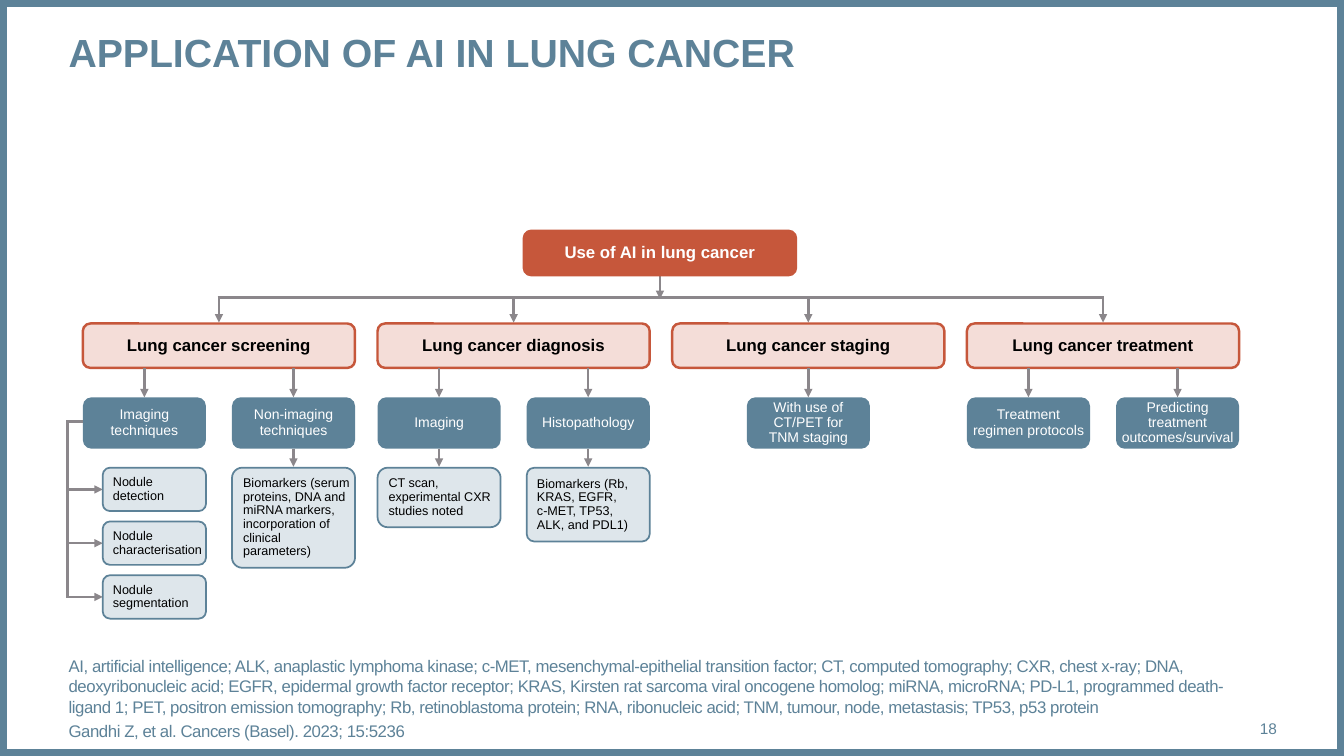
from dataclasses import dataclass

from lxml import etree
from pptx import Presentation
from pptx.dml.color import RGBColor
from pptx.enum.shapes import MSO_CONNECTOR, MSO_SHAPE
from pptx.enum.text import MSO_ANCHOR, MSO_AUTO_SIZE, PP_ALIGN
from pptx.oxml.ns import qn
from pptx.slide import Slide
from pptx.text.text import TextFrame
from pptx.util import Pt

RECT, ROUNDED = MSO_SHAPE.RECTANGLE, MSO_SHAPE.ROUNDED_RECTANGLE
STRAIGHT = MSO_CONNECTOR.STRAIGHT
TOP, MIDDLE, BOTTOM = MSO_ANCHOR.TOP, MSO_ANCHOR.MIDDLE, MSO_ANCHOR.BOTTOM
LEFT, CENTER, RIGHT = PP_ALIGN.LEFT, PP_ALIGN.CENTER, PP_ALIGN.RIGHT
NO_FIT = MSO_AUTO_SIZE.NONE

BLUE = RGBColor(0x5D, 0x82, 0x98)
PALE_BLUE = RGBColor(0xDE, 0xE6, 0xEB)
RUST = RGBColor(0xC6, 0x57, 0x3B)
PALE_RUST = RGBColor(0xF4, 0xDD, 0xD8)
GREY = RGBColor(0x8B, 0x87, 0x8B)
BLACK = RGBColor(0, 0, 0)
WHITE = RGBColor(0xFF, 0xFF, 0xFF)

SLIDE_W, SLIDE_H = 960, 540
MARGIN = 49
ROOT_X, ROOT_Y = 374.2, 164.9
BUS_Y = 212.6
BRANCH_X, BRANCH_Y, BRANCH_W, BRANCH_H, BRANCH_PITCH = 59.2, 231.1, 194.4, 31.7, 210.5
TOPIC_Y, TOPIC_W, TOPIC_H = 283.8, 87.9, 36.7
DETAIL_Y = 334.1
NODULE_X, NODULE_W, NODULE_H, NODULE_PITCH = 73.4, 73.8, 31, 38.4
RAIL_X, RAIL_Y = 48.2, 301


@dataclass(frozen=True)
class BoxStyle:
    fill: RGBColor
    line: RGBColor | None
    line_w: float
    color: RGBColor
    size: float
    bold: bool = False
    align: PP_ALIGN = CENTER
    inset: float = 0


@dataclass(frozen=True)
class Topic:
    text: str
    detail: str = ""
    detail_h: float = 0
    corner: float = 0.169


@dataclass(frozen=True)
class Branch:
    text: str
    topics: tuple[Topic, ...]


ROOT_STYLE = BoxStyle(RUST, RUST, 1.75, WHITE, 12, True)
BRANCH_STYLE = BoxStyle(PALE_RUST, RUST, 1.75, BLACK, 12, True)
TOPIC_STYLE = BoxStyle(BLUE, None, 0, WHITE, 10)
DETAIL_STYLE = BoxStyle(PALE_BLUE, BLUE, 1.25, BLACK, 9, False, LEFT, 5.76)

BRANCHES = (
    Branch("Lung cancer screening", (
        Topic("Imaging\ntechniques"),
        Topic("Non-imaging\ntechniques",
              "Biomarkers (serum proteins, DNA and miRNA markers, "
              "incorporation of clinical parameters)", 71.5, 0.103))),
    Branch("Lung cancer diagnosis", (
        Topic("Imaging", "CT scan, experimental CXR studies noted", 42.5),
        Topic("Histopathology",
              "Biomarkers (Rb,\nKRAS, EGFR,\nc-MET, TP53,\nALK, and PDL1)", 52.7, 0.103))),
    Branch("Lung cancer staging", (Topic("With use of CT/PET for\nTNM staging"),)),
    Branch("Lung cancer treatment", (
        Topic("Treatment\nregimen protocols"),
        Topic("Predicting treatment outcomes/survival"))),
)
NODULES = ("Nodule\ndetection", "Nodule\ncharacterisation", "Nodule\nsegmentation")
FOOTNOTES = (
    "AI, artificial intelligence; ALK, anaplastic lymphoma kinase; c-MET, "
    "mesenchymal-epithelial transition factor; CT, computed tomography; CXR, chest x-ray; "
    "DNA, deoxyribonucleic acid; EGFR, epidermal growth factor receptor; KRAS, Kirsten rat "
    "sarcoma viral oncogene homolog; miRNA, microRNA; PD-L1, programmed death-ligand 1; PET, "
    "positron emission tomography; Rb, retinoblastoma protein; RNA, ribonucleic acid; TNM, "
    "tumour, node, metastasis; TP53, p53 protein",
    "Gandhi Z, et al. Cancers (Basel). 2023; 15:5236",
)


def write(tf: TextFrame, texts: tuple[str, ...], size: float, color: RGBColor,
          bold: bool = False, align: PP_ALIGN = LEFT, anchor: MSO_ANCHOR = MIDDLE,
          inset: float = 0, spacing: float = 1, gap: float = 0, tracking: int = 0) -> None:
    tf.word_wrap = True
    tf.auto_size = NO_FIT
    tf.vertical_anchor = anchor
    tf.margin_left = Pt(inset)
    tf.margin_top = tf.margin_right = tf.margin_bottom = 0
    for i, text in enumerate(texts):
        p = tf.add_paragraph() if i else tf.paragraphs[0]
        p.text = text
        p.alignment = align
        p.line_spacing = spacing
        p.space_before = Pt(gap if i else 0)
        p.font.name = "Arial"
        p.font.size = Pt(size)
        p.font.bold = bold
        p.font.color.rgb = color
        if tracking:
            p._p.pPr.find(qn("a:defRPr")).set("spc", str(tracking))


def add_box(s: Slide, text: str, x: float, y: float, w: float, h: float,
            style: BoxStyle, corner: float = 0.169) -> None:
    sp = s.shapes.add_shape(ROUNDED, Pt(x), Pt(y), Pt(w), Pt(h))
    sp.shadow.inherit = False
    sp.adjustments[0] = corner
    sp.fill.solid()
    sp.fill.fore_color.rgb = style.fill
    if style.line is None:
        sp.line.fill.background()
    else:
        sp.line.color.rgb = style.line
        sp.line.width = Pt(style.line_w)
    write(sp.text_frame, (text,), style.size, style.color, style.bold, style.align,
          inset=style.inset, spacing=0.9)


def add_line(s: Slide, x1: float, y1: float, x2: float, y2: float,
             arrow: bool = True, width: float = 1.75) -> None:
    cxn = s.shapes.add_connector(STRAIGHT, Pt(x1), Pt(y1), Pt(x2), Pt(y2))
    cxn.line.color.rgb = GREY
    cxn.line.width = Pt(width)
    if arrow:
        etree.SubElement(cxn.line._get_or_add_ln(), qn("a:tailEnd"), type="triangle")
    etree.SubElement(cxn._element.spPr, qn("a:effectLst"))


def add_frame(s: Slide) -> None:
    sp = s.shapes.add_shape(RECT, 0, 0, Pt(SLIDE_W), Pt(SLIDE_H))
    sp.shadow.inherit = False
    sp.fill.background()
    sp.line.color.rgb = BLUE
    sp.line.width = Pt(10)


def add_branch(s: Slide, branch: Branch, x: float) -> None:
    center = x + BRANCH_W / 2
    add_line(s, center, BUS_Y, center, BRANCH_Y - 0.7)
    add_box(s, branch.text, x, BRANCH_Y, BRANCH_W, BRANCH_H, BRANCH_STYLE)
    room = BRANCH_W - TOPIC_W
    offsets = (room / 2,) if len(branch.topics) == 1 else (0, room)
    for topic, offset in zip(branch.topics, offsets):
        left = x + offset
        mid = left + TOPIC_W / 2
        add_line(s, mid, BRANCH_Y + BRANCH_H, mid, TOPIC_Y)
        add_box(s, topic.text, left, TOPIC_Y, TOPIC_W, TOPIC_H, TOPIC_STYLE)
        if topic.detail:
            add_line(s, mid, TOPIC_Y + TOPIC_H, mid, DETAIL_Y - 0.7)
            add_box(s, topic.detail, left, DETAIL_Y, TOPIC_W, topic.detail_h,
                    DETAIL_STYLE, topic.corner)


def add_nodules(s: Slide) -> None:
    add_line(s, BRANCH_X, RAIL_Y, RAIL_X, RAIL_Y, arrow=False)
    for i, text in enumerate(NODULES):
        y = DETAIL_Y + i * NODULE_PITCH
        mid = y + NODULE_H / 2
        add_line(s, RAIL_X, mid, NODULE_X, mid)
        add_box(s, text, NODULE_X, y, NODULE_W, NODULE_H, DETAIL_STYLE)
    add_line(s, RAIL_X, RAIL_Y - 0.8, RAIL_X, mid + 0.8, arrow=False)


def main() -> None:
    prs = Presentation()
    prs.slide_width, prs.slide_height = Pt(SLIDE_W), Pt(SLIDE_H)
    s = prs.slides.add_slide(prs.slide_layouts[5])
    add_frame(s)

    title = s.shapes.title
    title.left, title.top, title.width, title.height = Pt(MARGIN), Pt(20.2), Pt(863), Pt(67.7)
    write(title.text_frame, ("APPLICATION OF AI IN LUNG CANCER",), 28, BLUE, True, anchor=TOP)

    for i, branch in enumerate(BRANCHES):
        add_branch(s, branch, BRANCH_X + i * BRANCH_PITCH)
    first = BRANCH_X + BRANCH_W / 2
    last = first + (len(BRANCHES) - 1) * BRANCH_PITCH
    add_line(s, first - 1, BUS_Y, last + 1, BUS_Y, arrow=False, width=2)
    root_mid = ROOT_X + BRANCH_W / 2
    add_line(s, root_mid, ROOT_Y + BRANCH_H, root_mid, BUS_Y + 1)
    add_box(s, "Use of AI in lung cancer", ROOT_X, ROOT_Y, BRANCH_W, BRANCH_H, ROOT_STYLE)
    add_nodules(s)

    notes = s.shapes.add_textbox(Pt(MARGIN), Pt(500.4), Pt(828), Pt(28.8))
    write(notes.text_frame, FOOTNOTES, 12, BLUE, anchor=BOTTOM, gap=3, tracking=-30)
    number = s.shapes.add_textbox(Pt(850.3), Pt(506.2), Pt(61.9), Pt(28.8))
    write(number.text_frame, ("18",), 11, BLUE, align=RIGHT)

    prs.save("out.pptx")


if __name__ == "__main__":
    main()
